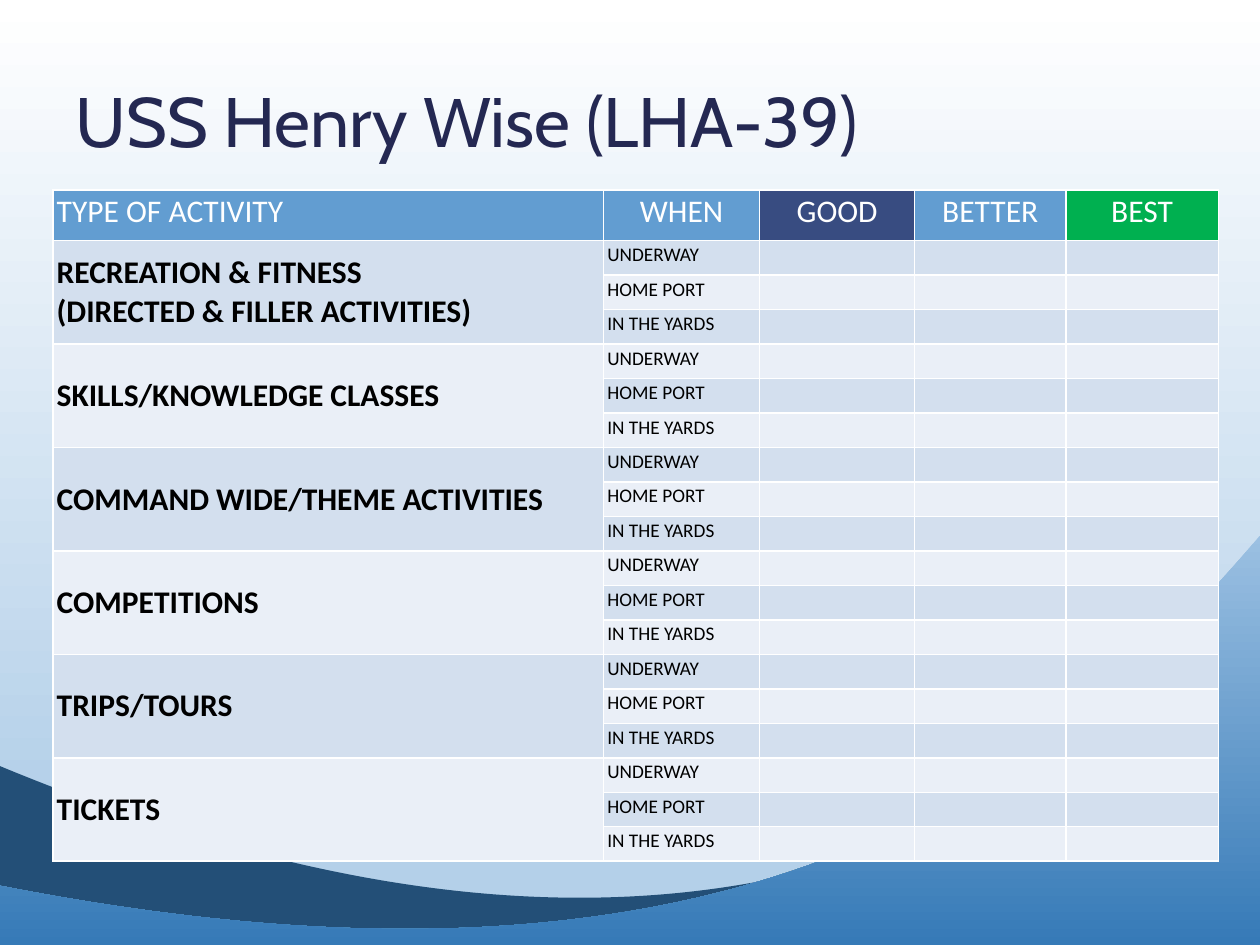
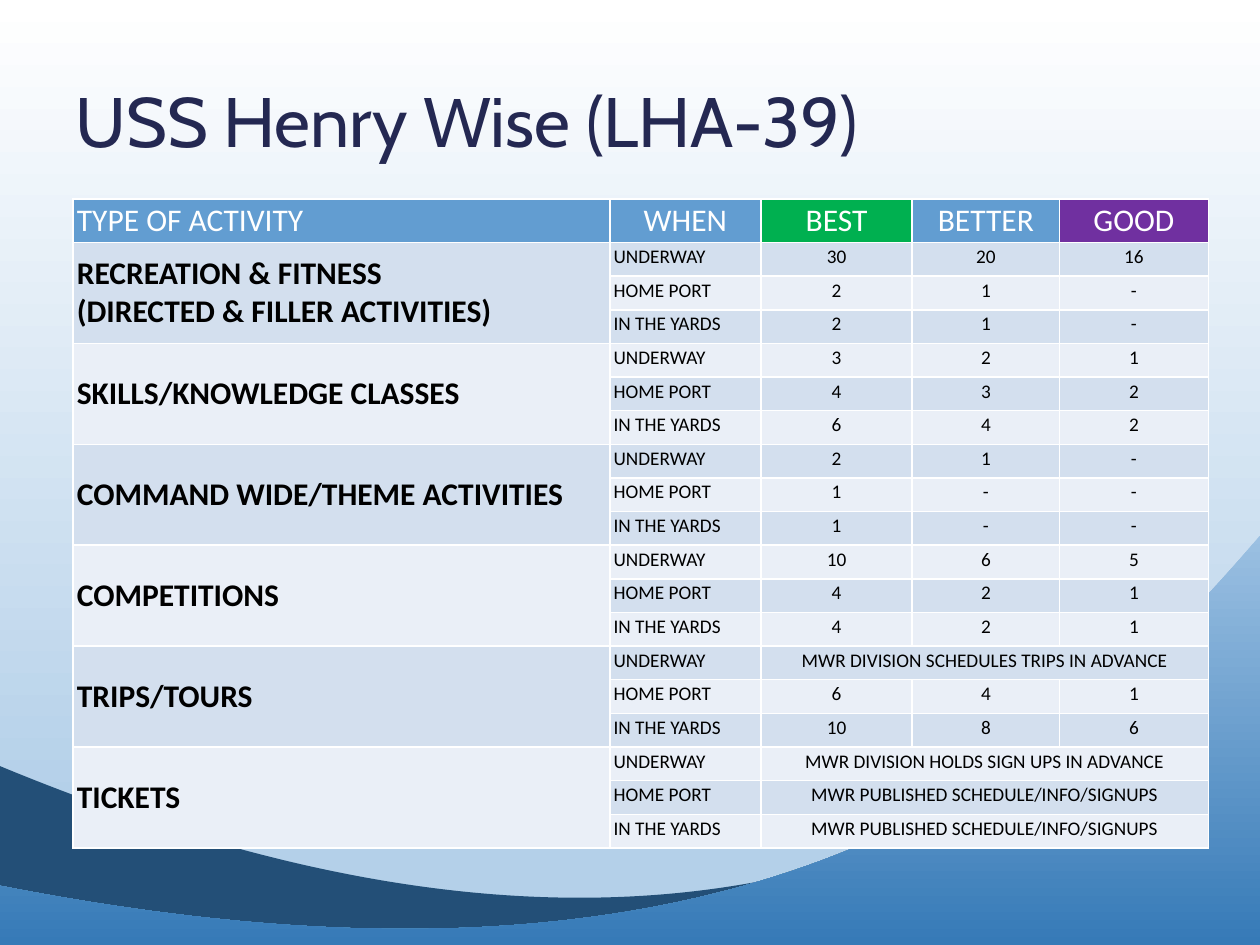
from dataclasses import dataclass
from math import cos, radians, sin

from lxml import etree
from pptx import Presentation
from pptx.dml.color import RGBColor
from pptx.dml.fill import FillFormat
from pptx.enum.text import MSO_ANCHOR, PP_ALIGN
from pptx.oxml.ns import qn
from pptx.slide import Slide, SlideLayout
from pptx.table import Table, _Cell
from pptx.util import Inches, Pt

LEFT, CENTER = PP_ALIGN.LEFT, PP_ALIGN.CENTER
TOP, MIDDLE, BOTTOM = MSO_ANCHOR.TOP, MSO_ANCHOR.MIDDLE, MSO_ANCHOR.BOTTOM

COLORS = {
    "white": "FFFFFF",
    "black": "000000",
    "sky": "B4D0E9",
    "deep wave": "234F77",
    "wave top": "9BC0E2",
    "wave bottom": "367AB7",
    "title": "242852",
    "header": "629DD1",
    "navy": "384C81",
    "green": "00B050",
    "purple": "7030A0",
    "dark band": "D3DFEE",
    "light band": "EAEFF7",
}
TITLE_FONT, TABLE_FONT = "Cabin", "Calibri"
NO_STYLE = "{2D5ABB26-0587-4C30-8999-92F81FD0307C}"
TITLE = "USS Henry Wise (LHA-39)"
ACTIVITIES = [
    "RECREATION & FITNESS\v(DIRECTED & FILLER ACTIVITIES)",
    "SKILLS/KNOWLEDGE CLASSES",
    "COMMAND WIDE/THEME ACTIVITIES",
    "COMPETITIONS",
    "TRIPS/TOURS",
    "TICKETS",
]
PLACES = ["UNDERWAY", "HOME PORT", "IN THE YARDS"]
BODY_ROWS = len(ACTIVITIES) * len(PLACES)
PUBLISHED = ["MWR PUBLISHED SCHEDULE/INFO/SIGNUPS"]
GOALS = [
    ["30", "20", "16"], ["2", "1", "-"], ["2", "1", "-"],
    ["3", "2", "1"], ["4", "3", "2"], ["6", "4", "2"],
    ["2", "1", "-"], ["1", "-", "-"], ["1", "-", "-"],
    ["10", "6", "5"], ["4", "2", "1"], ["4", "2", "1"],
    ["MWR DIVISION SCHEDULES TRIPS IN ADVANCE"], ["6", "4", "1"], ["10", "8", "6"],
    ["MWR DIVISION HOLDS SIGN UPS IN ADVANCE"], PUBLISHED, PUBLISHED,
]

Point = tuple[float, float]


@dataclass
class Wave:
    start: Point
    segments: list[list[Point]]
    colors: list[str]
    center: Point = (5, 5.88)
    rotation: float = 0


@dataclass
class Column:
    label: str
    width: float
    color: str = "header"


@dataclass
class ActivityTable:
    left: float
    top: float
    height: float
    header_height: float
    columns: list[Column]
    goals: list[list[str]]


WAVES = [
    Wave((9.71, 5.26), [
        [(9.51, 6.03), (9.64, 6.81), (9.81, 7.52)],
        [(0, 7.52)],
        [(0, 6.08)],
        [(4.88, 8.1), (7.59, 6.84), (9.71, 5.26)],
    ], ["deep wave"], (5, 6.43), 14.2),
    Wave((10, 4.25), [
        [(10.01, 7.5)],
        [(0, 7.5)],
        [(0, 7.29), (0, 7.12), (0, 7.03)],
        [(5.71, 8.15), (8.24, 6.34), (10, 4.25)],
    ], ["wave top", "wave bottom"]),
]
TABLES = [
    ActivityTable(0.42, 1.51, 5.33, 0.4, [
        Column("TYPE OF ACTIVITY", 4.37), Column("WHEN", 1.24),
        Column("GOOD", 1.23, "navy"), Column("BETTER", 1.2),
        Column("BEST", 1.21, "green"),
    ], [["", "", ""]] * BODY_ROWS),
    ActivityTable(0.58, 1.58, 5.15, 0.34, [
        Column("TYPE OF ACTIVITY", 4.26), Column("WHEN", 1.2),
        Column("BEST", 1.2, "green"), Column("BETTER", 1.17),
        Column("GOOD", 1.18, "purple"),
    ], GOALS),
]


def rgb(name: str) -> RGBColor:
    return RGBColor.from_string(COLORS[name])


def fill_down(fill: FillFormat, names: list[str], last_position: float = 1) -> None:
    fill.gradient()
    fill.gradient_angle = 270
    for stop, name, position in zip(fill.gradient_stops, names, (0, last_position)):
        stop.color.rgb = rgb(name)
        stop.position = position


def unrotate(wave: Wave, point: Point) -> tuple[int, int]:
    angle = radians(wave.rotation)
    center_x, center_y = wave.center
    x, y = point[0] - center_x, point[1] - center_y
    return (Inches(center_x + x * cos(angle) + y * sin(angle)),
            Inches(center_y - x * sin(angle) + y * cos(angle)))


def add_wave(page: Slide, layout: SlideLayout, wave: Wave, depth: int) -> None:
    segments = [[unrotate(wave, point) for point in segment] for segment in wave.segments]
    builder = page.shapes.build_freeform(*unrotate(wave, wave.start))
    builder.add_line_segments([segment[-1] for segment in segments], close=True)
    shape = builder.convert_to_shape()
    lines = list(shape.element.iter(qn("a:lnTo")))
    for line, segment in zip(lines, segments):
        if len(segment) == 3:
            curve = etree.Element(qn("a:cubicBezTo"))
            for x, y in segment:
                etree.SubElement(curve, qn("a:pt"), x=str(x - shape.left), y=str(y - shape.top))
            line.getparent().replace(line, curve)
    shape.rotation = wave.rotation
    shape.shadow.inherit = False
    shape.line.fill.background()
    if len(wave.colors) == 1:
        shape.fill.solid()
        shape.fill.fore_color.rgb = rgb(wave.colors[0])
    else:
        fill_down(shape.fill, wave.colors)
    layout.shapes.element.insert(2 + depth, shape.element)


def add_title(page: Slide) -> None:
    title = page.shapes.title
    title.left, title.top = Inches(0.5), Inches(0.3)
    title.width, title.height = Inches(9), Inches(1.03)
    frame = title.text_frame
    frame.text = TITLE
    frame.vertical_anchor = BOTTOM
    para = frame.paragraphs[0]
    para.alignment = LEFT
    para.font.name = TITLE_FONT
    para.font.size = Pt(40)
    para.font.color.rgb = rgb("title")


def set_borders(cell: _Cell) -> None:
    properties = cell._tc.get_or_add_tcPr()
    for side in "LRTB":
        line = etree.SubElement(properties, qn(f"a:ln{side}"), w=str(Pt(1)))
        solid = etree.SubElement(line, qn("a:solidFill"))
        etree.SubElement(solid, qn("a:srgbClr"), val=COLORS["white"])


def style_cell(cell: _Cell, fill: str) -> None:
    set_borders(cell)
    cell.fill.solid()
    cell.fill.fore_color.rgb = rgb(fill)
    cell.margin_left = cell.margin_right = Inches(0.03)
    cell.margin_top = cell.margin_bottom = Inches(0.02)


def write_cell(cell: _Cell, text: str, size: int, color: str = "black",
               align: PP_ALIGN = LEFT, anchor: MSO_ANCHOR = TOP, bold: bool = False) -> None:
    cell.text = text
    cell.vertical_anchor = anchor
    para = cell.text_frame.paragraphs[0]
    para.alignment = align
    para.font.name = TABLE_FONT
    para.font.size = Pt(size)
    para.font.bold = bold
    para.font.color.rgb = rgb(color)
    if not text:
        etree.SubElement(para._p, qn("a:endParaRPr"), sz=str(size * 100))


def write_header(table: Table, columns: list[Column]) -> None:
    for index, column in enumerate(columns):
        table.columns[index].width = Inches(column.width)
        cell = table.cell(0, index)
        style_cell(cell, column.color)
        write_cell(cell, column.label, 18, "white", CENTER if index else LEFT)


def write_row(table: Table, row: int, goals: list[str]) -> None:
    for column in range(len(table.columns)):
        style_cell(table.cell(row, column), "dark band" if row % 2 else "light band")
    activity, place = divmod(row - 1, len(PLACES))
    if place == 0:
        cell = table.cell(row, 0)
        cell.merge(table.cell(row + len(PLACES) - 1, 0))
        write_cell(cell, ACTIVITIES[activity], 18, anchor=MIDDLE, bold=True)
    write_cell(table.cell(row, 1), PLACES[place], 11)
    if len(goals) == 1:
        table.cell(row, 2).merge(table.cell(row, 4))
    for column, goal in enumerate(goals, start=2):
        write_cell(table.cell(row, column), goal, 11, align=CENTER)


def add_activity_table(page: Slide, plan: ActivityTable) -> None:
    width = sum(column.width for column in plan.columns)
    frame = page.shapes.add_table(BODY_ROWS + 1, len(plan.columns), Inches(plan.left),
                                  Inches(plan.top), Inches(width), Inches(plan.height))
    table = frame.table
    table.first_row = table.horz_banding = False
    table._tbl.tblPr.find(qn("a:tableStyleId")).text = NO_STYLE
    for row in table.rows:
        row.height = Inches((plan.height - plan.header_height) / BODY_ROWS)
    table.rows[0].height = Inches(plan.header_height)
    write_header(table, plan.columns)
    for row, goals in enumerate(plan.goals, start=1):
        write_row(table, row, goals)


def main() -> None:
    deck = Presentation()
    deck.slide_width, deck.slide_height = Inches(10), Inches(7.5)
    layout = deck.slide_layouts[5]
    fill_down(layout.background.fill, ["white", "sky"], 0.85)
    pages = [deck.slides.add_slide(layout) for _ in TABLES]
    for depth, wave in enumerate(WAVES):
        add_wave(pages[0], layout, wave, depth)
    for page, plan in zip(pages, TABLES):
        add_title(page)
        add_activity_table(page, plan)
    deck.save("out.pptx")


if __name__ == "__main__":
    main()
